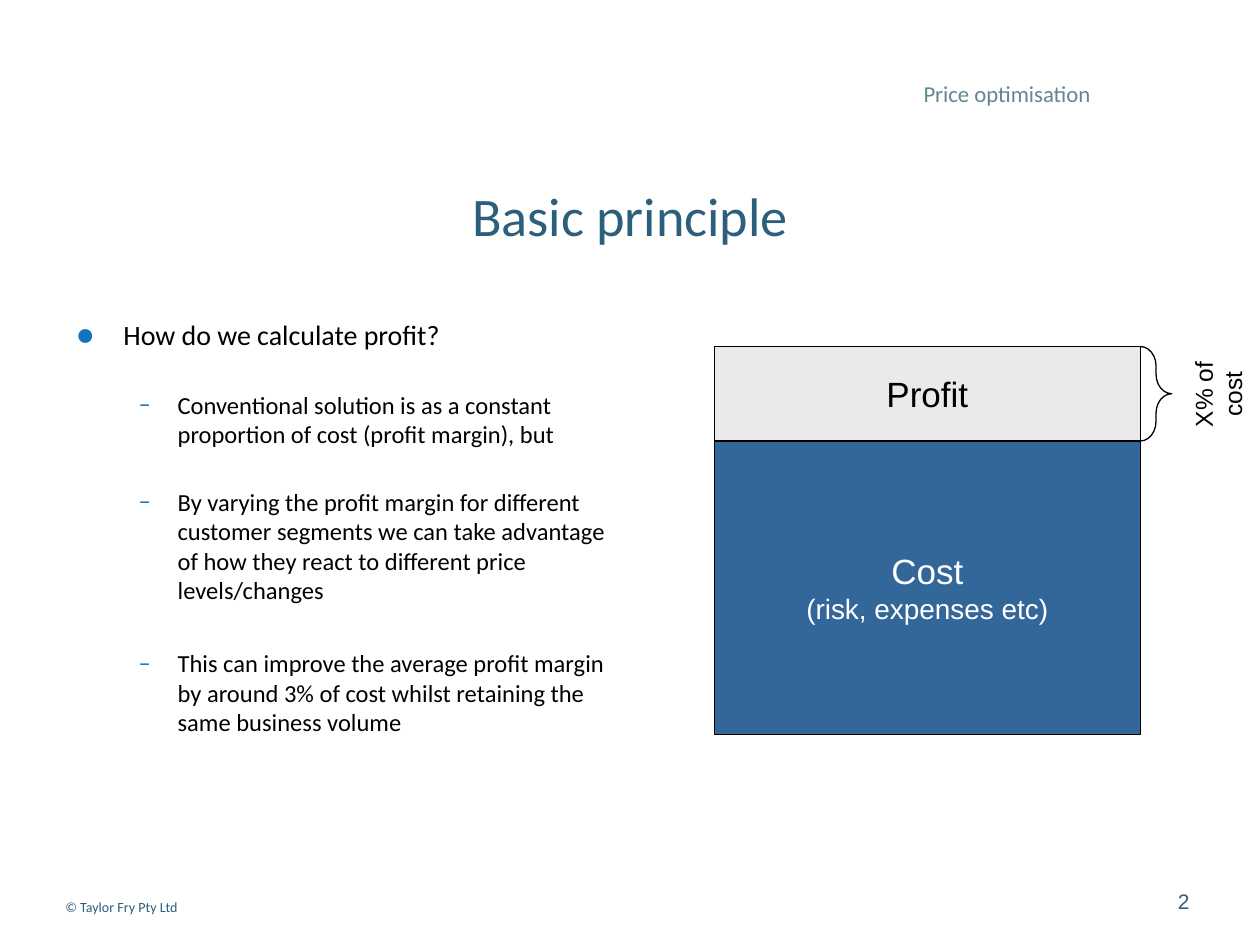
from lxml import etree
from pptx import Presentation
from pptx.dml.color import RGBColor
from pptx.enum import shapes, text
from pptx.oxml import ns
from pptx.util import Inches, Pt

TEAL, BULLET_BLUE, BLACK, WHITE = "2B5F7C", "1075BB", "000000", "FFFFFF"
ALIGN, ANCHOR = text.PP_ALIGN, text.MSO_ANCHOR


def color(hex_string):
    return RGBColor.from_string(hex_string)


def add_run(paragraph, words, size, hex_string, font="Calibri"):
    run = paragraph.add_run()
    run.text = words
    run.font.name, run.font.size = font, Pt(size)
    run.font.color.rgb = color(hex_string)


def place(shape, left, top, width, height):
    shape.left, shape.top = Inches(left), Inches(top)
    shape.width, shape.height = Inches(width), Inches(height)


def add_label(slide, box, words, size, hex_string, font="Calibri", align=ALIGN.LEFT):
    label = slide.shapes.add_textbox(*map(Inches, box))
    label.text_frame.word_wrap = True
    paragraph = label.text_frame.paragraphs[0]
    paragraph.alignment = align
    add_run(paragraph, words, size, hex_string, font)
    return label


def set_bullet(paragraph, character, left, hanging, percent):
    properties = paragraph._p.get_or_add_pPr()
    properties.set("marL", str(Inches(left)))
    properties.set("indent", str(-Inches(hanging)))
    bullet_color = etree.SubElement(properties, ns.qn("a:buClr"))
    etree.SubElement(bullet_color, ns.qn("a:srgbClr"), val=BULLET_BLUE)
    etree.SubElement(properties, ns.qn("a:buSzPct"), val=str(percent * 1000))
    etree.SubElement(properties, ns.qn("a:buFont"), typeface="Calibri")
    etree.SubElement(properties, ns.qn("a:buChar"), char=character)


def fill_title(slide, box):
    title = slide.shapes.title
    place(title, *box)
    title.text_frame.vertical_anchor = ANCHOR.MIDDLE
    paragraph = title.text_frame.paragraphs[0]
    paragraph.alignment = ALIGN.CENTER
    add_run(paragraph, "Basic principle", 31, TEAL)


def fill_body(slide, box):
    body = slide.placeholders[1]
    place(body, *box)
    frame = body.text_frame
    frame.auto_size = text.MSO_AUTO_SIZE.NONE
    points = [
        (0, 0, "How do we calculate profit?"),
        (1, 22, "Conventional solution is as a constant proportion of cost "
                "(profit margin), but"),
        (1, 22, "By varying the profit margin for different customer segments we can "
                "take advantage of how they react to different price levels/changes"),
        (1, 25, "This can improve the average profit margin by around 3% of cost "
                "whilst retaining the same business volume"),
    ]
    bullets = [("•", 0.38, 0.38, 140), ("–", 0.81, 0.31, 100)]
    for index, (level, space, words) in enumerate(points):
        paragraph = frame.add_paragraph() if index else frame.paragraphs[0]
        paragraph.level = level
        set_bullet(paragraph, *bullets[level])
        paragraph.space_before = Pt(space)
        add_run(paragraph, words, (16, 14)[level], BLACK)


def add_outlined(slide, kind, box, fill=None):
    shape = slide.shapes.add_shape(kind, *map(Inches, box))
    shape.shadow.inherit = False
    shape.line.color.rgb = color(BLACK)
    shape.line.width = Pt(0.75)
    if fill:
        shape.fill.solid()
        shape.fill.fore_color.rgb = color(fill)
    else:
        shape.fill.background()
    return shape


def add_block(slide, box, fill, hex_string, heading, detail=None):
    block = add_outlined(slide, shapes.MSO_SHAPE.RECTANGLE, box, fill)
    block.text_frame.vertical_anchor = ANCHOR.MIDDLE
    paragraph = block.text_frame.paragraphs[0]
    paragraph.alignment = ALIGN.CENTER
    add_run(paragraph, heading, 20, hex_string, "Arial")
    if detail:
        paragraph.add_line_break()
        add_run(paragraph, detail, 16, hex_string, "Arial")


def add_price_stack(slide, box):
    """Profit on top of cost, with a brace marking the margin."""
    left, top, width, height = box
    profit_height = 0.75
    right = left + width
    add_block(slide, (left, top + profit_height, width, height - profit_height),
              "336699", WHITE, "Cost", "(risk, expenses etc)")
    add_block(slide, (left, top, width, profit_height), "EAEAEA", BLACK, "Profit")

    brace = add_outlined(slide, shapes.MSO_SHAPE.RIGHT_BRACE,
                         (right, top, 0.25, profit_height))
    brace.adjustments[0] = 0.62

    margin = add_label(slide, (right + 0.28, top - 0.08, 0.67, profit_height + 0.17),
                       "X% of cost", 14, BLACK, "Arial", ALIGN.CENTER)
    margin.text_frame.vertical_anchor = ANCHOR.MIDDLE
    margin.text_frame._txBody.bodyPr.set("vert", "vert270")


def main():
    presentation = Presentation()
    presentation.slide_width, presentation.slide_height = Inches(10), Inches(7.5)
    slide = presentation.slides.add_slide(presentation.slide_layouts[1])
    add_label(slide, (0.42, 7.08, 1.5, 0.23), "© Taylor Fry Pty Ltd", 8, TEAL)
    add_label(slide, (9.25, 7, 0.5, 0.3), "2", 12, TEAL, "Arial")
    add_label(slide, (5.58, 0.58, 3.17, 0.52), "Price optimisation", 13, "628790",
              align=ALIGN.RIGHT)
    fill_title(slide, (0.5, 1.08, 9, 1.25))
    fill_body(slide, (0.5, 2.47, 4.42, 4.45))
    add_price_stack(slide, (5.67, 2.75, 3.38, 3.08))
    presentation.save("out.pptx")


if __name__ == "__main__":
    main()
